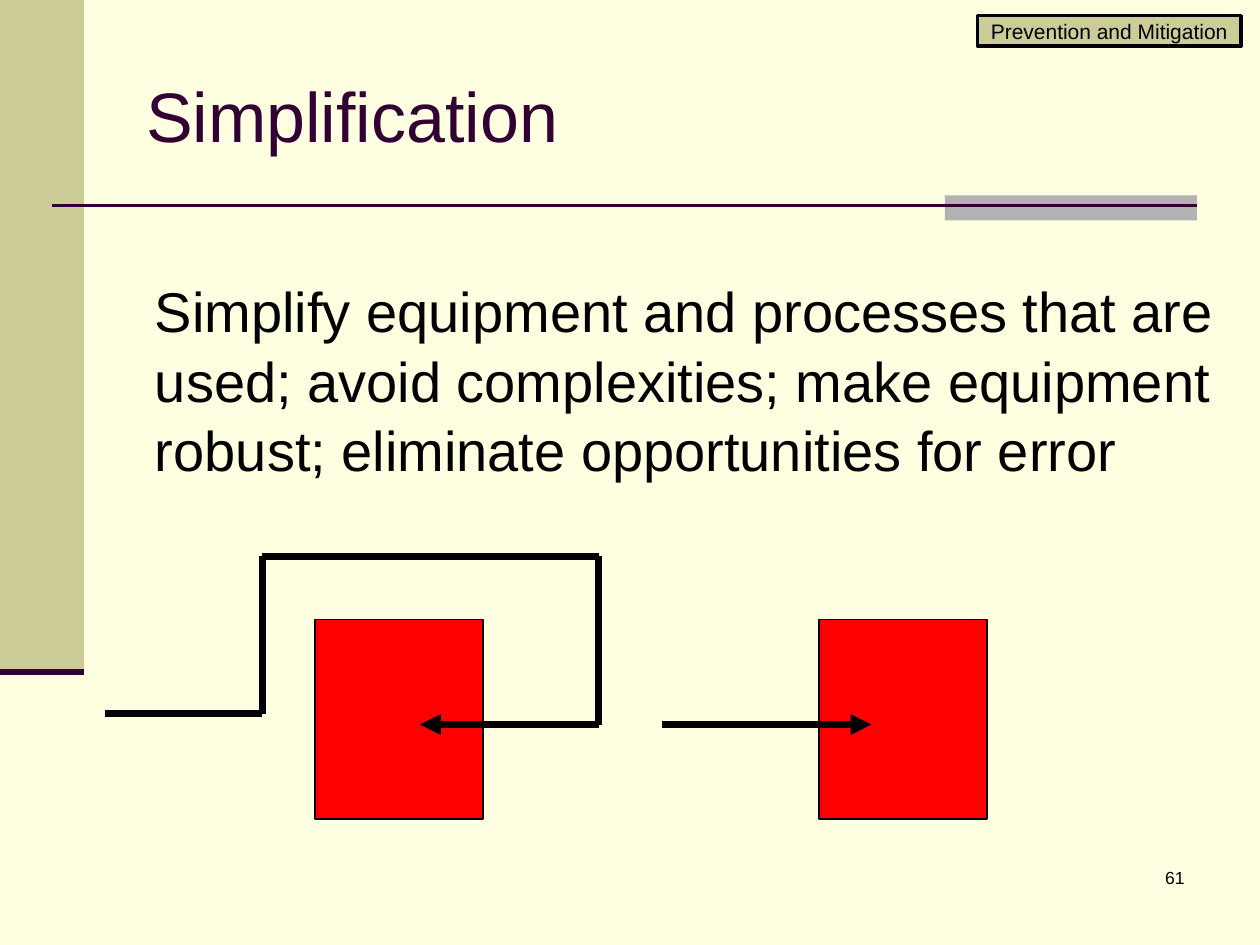
from itertools import pairwise

from lxml import etree
from pptx import Presentation
from pptx.dml.color import RGBColor
from pptx.enum.shapes import MSO_CONNECTOR, MSO_SHAPE
from pptx.enum.text import MSO_ANCHOR, MSO_AUTO_SIZE, PP_ALIGN
from pptx.oxml.ns import qn
from pptx.util import Inches, Pt

STRAIGHT = MSO_CONNECTOR.STRAIGHT
RECTANGLE = MSO_SHAPE.RECTANGLE
TOP, MIDDLE = MSO_ANCHOR.TOP, MSO_ANCHOR.MIDDLE
NO_FIT = MSO_AUTO_SIZE.NONE
LEFT, CENTER, RIGHT = PP_ALIGN.LEFT, PP_ALIGN.CENTER, PP_ALIGN.RIGHT

CREAM, KHAKI, GRAY = "FFFFE1", "CCCC99", "B2B2B2"
PLUM, RED, BLACK = "330033", "FF0000", "000000"
FONT = "Arial"


def color(hex_string):
    return RGBColor.from_string(hex_string)


def grid(*cells):
    """Turn grid cells, twelve to the inch, into lengths."""
    return [Inches(cell / 12) for cell in cells]


def add_box(slide, cells, fill, line_width=None):
    box = slide.shapes.add_shape(RECTANGLE, *grid(*cells))
    box.shadow.inherit = False
    box.fill.solid()
    box.fill.fore_color.rgb = color(fill)
    if line_width:
        box.line.color.rgb = color(BLACK)
        box.line.width = Pt(line_width)
    else:
        box.line.fill.background()
    return box


def add_line(slide, start, end, width, line_color=BLACK, arrow=False):
    line = slide.shapes.add_connector(STRAIGHT, *grid(*start, *end))
    line.line.color.rgb = color(line_color)
    line.line.width = Pt(width)
    if arrow:
        outline = line.line._get_or_add_ln()
        etree.SubElement(outline, qn("a:tailEnd"), type="triangle")
    etree.SubElement(line._element.spPr, qn("a:effectLst"))


def add_route(slide, points):
    """Draw straight legs through the points, the last with an arrowhead."""
    for start, end in pairwise(points):
        add_line(slide, start, end, 4, arrow=end == points[-1])


def write(shape, text, size, align=LEFT, anchor=TOP, text_color=BLACK):
    frame = shape.text_frame
    frame.word_wrap = True
    frame.auto_size = NO_FIT
    frame.vertical_anchor = anchor
    para = frame.paragraphs[0]
    para.alignment = align
    span = para.add_run()
    span.text = text
    span.font.name = FONT
    span.font.size = Pt(size)
    span.font.color.rgb = color(text_color)
    return para


def place(shape, left, top, width, height):
    shape.left, shape.top = Inches(left), Inches(top)
    shape.width, shape.height = Inches(width), Inches(height)


def add_decoration(slide):
    add_box(slide, (0, 0, 8, 64), KHAKI)
    add_box(slide, (90, 18.6, 24, 2.4), GRAY)
    add_line(slide, (5, 19.6), (114, 19.6), 1.5, PLUM)
    add_line(slide, (0, 64), (8, 64), 3.5, PLUM)


def fill_placeholders(slide):
    title, body = slide.placeholders
    place(title, 1.06, 0.28, 8.66, 1.25)
    write(title, "Simplification", 40, anchor=MIDDLE, text_color=PLUM)

    place(body, 0.75, 2.12, 9.25, 3.83)
    para = write(body, "Simplify equipment and processes that are used; avoid "
                 "complexities; make equipment robust; eliminate "
                 "opportunities for error", 32)
    para.space_before = Pt(0)
    para.line_spacing = 1.04
    properties = para._p.get_or_add_pPr()
    properties.set("marL", str(Inches(0.38)))
    properties.set("indent", "0")
    etree.SubElement(properties, qn("a:buNone"))


def add_routes_diagram(slide):
    for column in (30, 78):
        add_box(slide, (column, 59, 16, 19), RED, 0.75)
    add_route(slide, [(10, 68), (25, 68), (25, 53),
                      (57, 53), (57, 69), (40, 69)])
    add_route(slide, [(63, 69), (83, 69)])


def add_labels(slide):
    label = add_box(slide, (93.1, 1.5, 25.1, 2.9), KHAKI, 2)
    frame = label.text_frame
    frame.margin_top = frame.margin_bottom = 0
    frame.margin_left = frame.margin_right = 0
    write(label, "Prevention and Mitigation", 12, CENTER, MIDDLE)

    number = slide.shapes.add_textbox(*grid(89, 82, 25, 6))
    write(number, "61", 10, RIGHT)


def main():
    deck = Presentation()
    deck.slide_width, deck.slide_height = Inches(10), Inches(7.5)
    slide = deck.slides.add_slide(deck.slide_layouts[1])
    background = slide.background.fill
    background.solid()
    background.fore_color.rgb = color(CREAM)

    add_decoration(slide)
    fill_placeholders(slide)
    add_routes_diagram(slide)
    add_labels(slide)
    deck.save("out.pptx")


if __name__ == "__main__":
    main()
